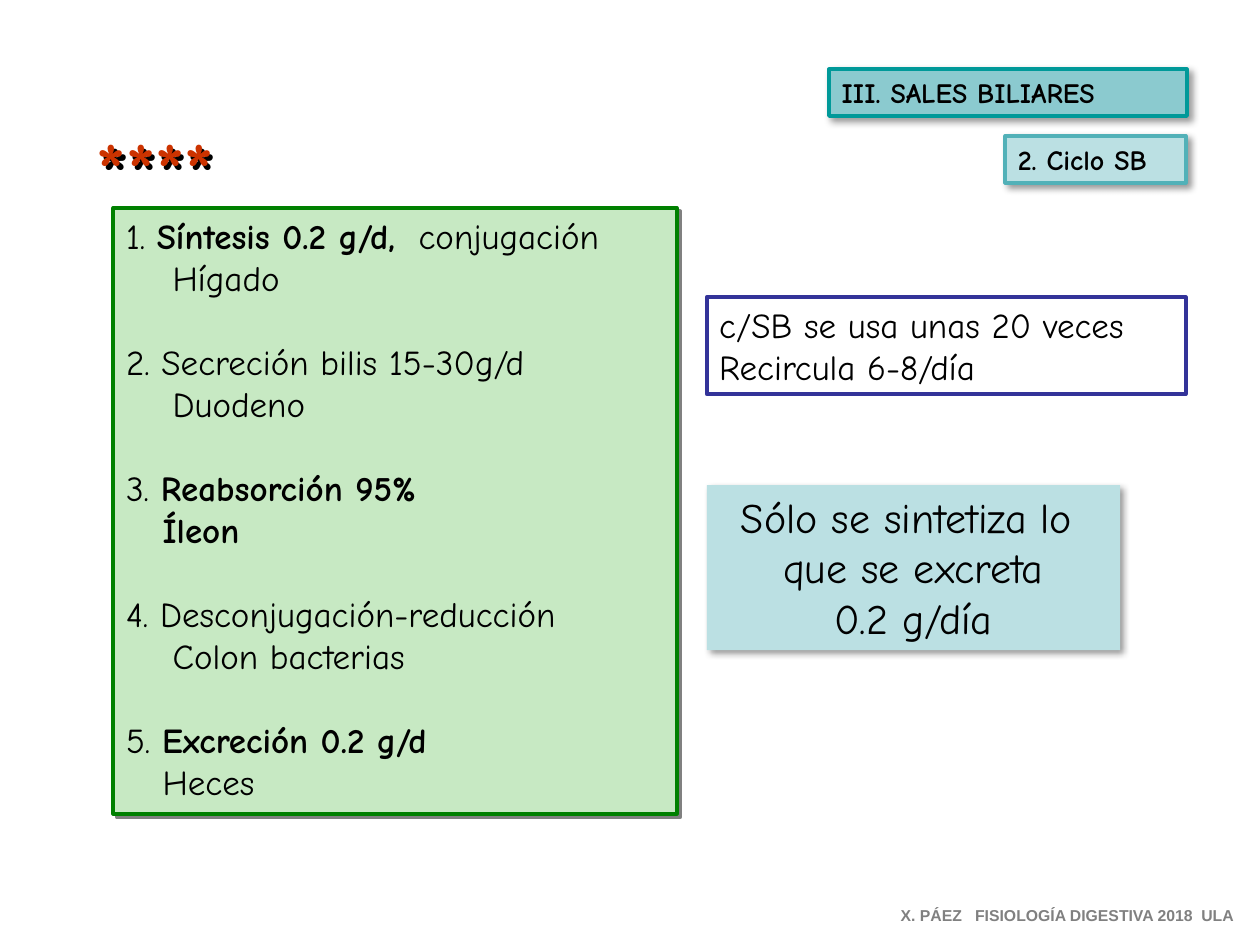
import lxml.etree
import pptx
import pptx.dml.color
import pptx.enum.shapes
import pptx.enum.text
import pptx.oxml.ns
import pptx.util

Inches = pptx.util.Inches
Pt = pptx.util.Pt
HAND_FONT = "Comic Neue"
SOFT_SHADOW = ("000000", 40, 4, 3)
HARD_SHADOW = ("808080", 100, 0, 2.8)
STAR_SHADOW = ("000000", 100, 0, 2.8)

STEPS = [
    ([("1. ", False), ("Síntesis 0.2 g/d,", True), ("  conjugación", False)], ("Hígado", False), 0.37),
    ([("2. Secreción bilis 15-30g/d", False)], ("Duodeno", False), 0.37),
    ([("3. ", False), ("Reabsorción 95%", True)], ("Íleon", True), 0.29),
    ([("4. Desconjugación-reducción", False)], ("Colon bacterias", False), 0.37),
    ([("5. ", False), ("Excreción 0.2 g/d", True)], ("Heces", False), 0.29),
]


def color(value):
    return pptx.dml.color.RGBColor.from_string(value)


def place(shape, left, top, width, height):
    shape.left, shape.top = Inches(left), Inches(top)
    shape.width, shape.height = Inches(width), Inches(height)


def add_shadow(shape, value, opacity, blur, distance):
    shape.shadow.inherit = False
    effects = shape._element.spPr.find(pptx.oxml.ns.qn("a:effectLst"))
    outer = lxml.etree.SubElement(
        effects, pptx.oxml.ns.qn("a:outerShdw"), blurRad=str(Pt(blur)),
        dist=str(Pt(distance)), dir="2700000", algn="tl", rotWithShape="0")
    tint = lxml.etree.SubElement(outer, pptx.oxml.ns.qn("a:srgbClr"), val=value)
    lxml.etree.SubElement(tint, pptx.oxml.ns.qn("a:alpha"), val=str(opacity * 1000))


def style_box(shape, fill=None, line=None, shadow=None):
    if fill:
        shape.fill.solid()
        shape.fill.fore_color.rgb = color(fill)
    else:
        shape.fill.background()
    if line:
        shape.line.color.rgb = color(line)
        shape.line.width = Pt(2.25)
    else:
        shape.line.fill.background()
    if shadow:
        add_shadow(shape, *shadow)
    else:
        shape.shadow.inherit = False
    frame = shape.text_frame
    frame.word_wrap = True
    frame.auto_size = pptx.enum.text.MSO_AUTO_SIZE.NONE
    frame.vertical_anchor = pptx.enum.text.MSO_ANCHOR.TOP


def style_font(font, size, bold=False, name=HAND_FONT, value="000000"):
    font.size, font.bold, font.name = Pt(size), bold, name
    font.color.rgb = color(value)


def write_lines(shape, lines, size, centered=False, **font_options):
    align = pptx.enum.text.PP_ALIGN
    shape.text_frame.text = "\n".join(lines)
    for paragraph in shape.text_frame.paragraphs:
        paragraph.alignment = align.CENTER if centered else align.LEFT
        style_font(paragraph.font, size, **font_options)
        for run in paragraph.runs:
            style_font(run.font, size, **font_options)


def add_box(slide, bounds, lines, size, centered=False, bold=False, **box_options):
    shape = slide.shapes.add_shape(
        pptx.enum.shapes.MSO_SHAPE.RECTANGLE, *map(Inches, bounds))
    style_box(shape, **box_options)
    write_lines(shape, lines, size, centered, bold=bold)


def add_label(slide, bounds, text, size, shadow=None, **font_options):
    shape = slide.shapes.add_textbox(*map(Inches, bounds))
    style_box(shape, shadow=shadow)
    write_lines(shape, [text], size, bold=True, **font_options)


def add_step_line(paragraph, runs, indent=0, space_before=0):
    properties = paragraph._p.get_or_add_pPr()
    properties.set("marL", str(Inches(indent)))
    properties.set("indent", "0")
    paragraph.space_before = Pt(space_before)
    lxml.etree.SubElement(properties, pptx.oxml.ns.qn("a:buNone"))
    for text, bold in runs:
        run = paragraph.add_run()
        run.text = text
        style_font(run.font, 20, bold)


def fill_title(title):
    place(title, 6.58, 0.55, 2.84, 0.37)
    style_box(title, fill="8BCACF", line="009999", shadow=SOFT_SHADOW)
    write_lines(title, ["III. SALES BILIARES"], 16, bold=True)


def fill_steps(body):
    place(body, 0.9, 1.65, 4.47, 4.81)
    style_box(body, fill="C7E9C3", line="008000", shadow=HARD_SHADOW)
    frame = body.text_frame
    for index, (heading, location, indent) in enumerate(STEPS):
        paragraph = frame.add_paragraph() if index else frame.paragraphs[0]
        add_step_line(paragraph, heading, space_before=24 if index else 0)
        add_step_line(frame.add_paragraph(), [location], indent)


def main():
    presentation = pptx.Presentation()
    presentation.slide_width, presentation.slide_height = Inches(10), Inches(7.5)
    slide = presentation.slides.add_slide(presentation.slide_layouts[1])
    fill_title(slide.shapes.title)
    fill_steps(slide.placeholders[1])
    add_box(slide, (7.98, 1.08, 1.43, 0.37), ["2. Ciclo SB"], 16, bold=True,
            fill="BBE0E3", line="52B1B8", shadow=SOFT_SHADOW)
    add_box(slide, (5.61, 2.36, 3.8, 0.77),
            ["c/SB se usa unas 20 veces", "Recircula 6-8/día"], 20, line="333399")
    add_box(slide, (5.61, 3.85, 3.28, 1.31),
            ["Sólo se sintetiza lo ", "que se excreta", "0.2 g/día"], 24,
            centered=True, fill="BBE0E3", shadow=SOFT_SHADOW)
    add_label(slide, (0.67, 0.91, 1.51, 0.84), "****", 44,
              shadow=STAR_SHADOW, value="CC3300")
    add_label(slide, (7.05, 7.14, 2.89, 0.25),
              "X. PÁEZ   FISIOLOGÍA DIGESTIVA 2018  ULA", 9,
              name="Arial", value="808080")
    presentation.save("out.pptx")


if __name__ == "__main__":
    main()
